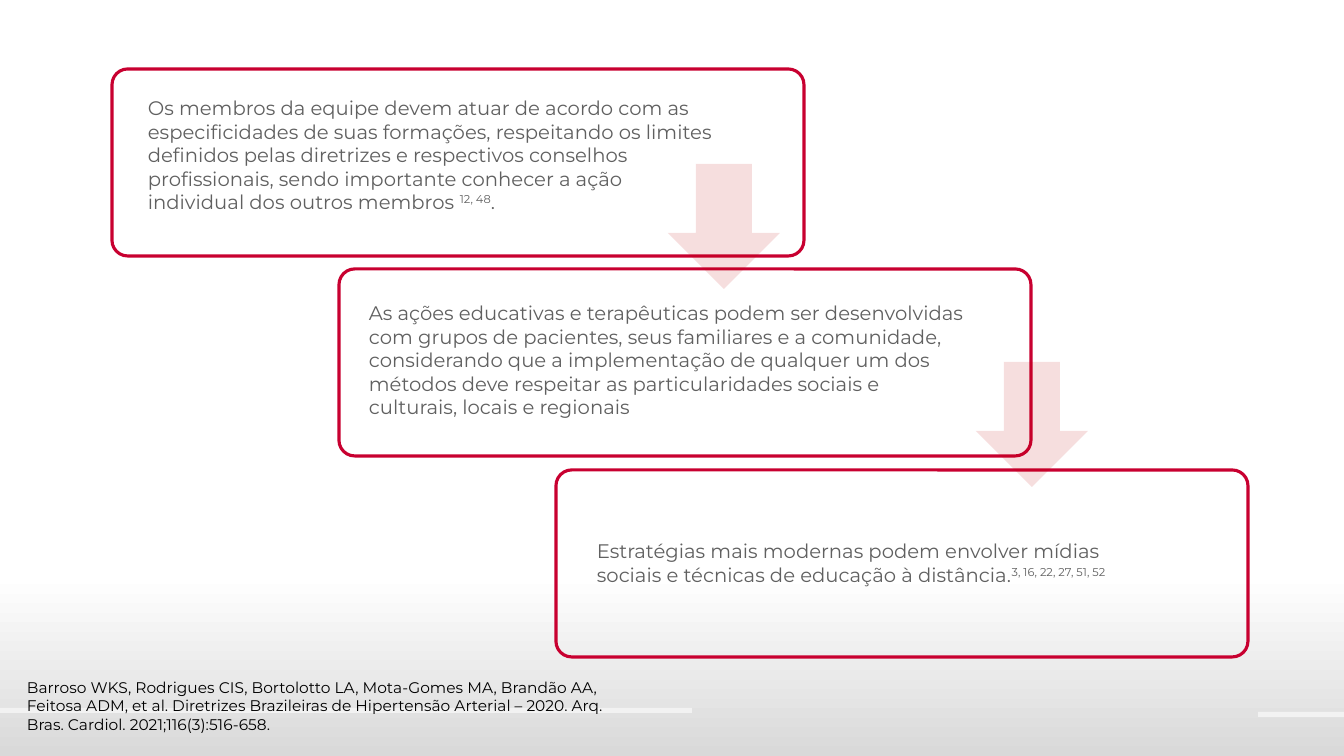
from lxml import etree
from pptx import Presentation
from pptx.dml.color import RGBColor
from pptx.enum.shapes import MSO_SHAPE
from pptx.enum.text import MSO_AUTO_SIZE
from pptx.oxml.ns import qn
from pptx.util import Pt

PX = 914400 / 100.8
PAGE_WIDTH, PAGE_HEIGHT = 1344, 756
FRAME_WIDTH, FRAME_HEIGHT = 692, 187
ARROW_WIDTH, ARROW_HEIGHT = 112, 125
RECTANGLE = MSO_SHAPE.RECTANGLE
ROUNDED = MSO_SHAPE.ROUNDED_RECTANGLE
DOWN_ARROW = MSO_SHAPE.DOWN_ARROW
GROW = MSO_AUTO_SIZE.SHAPE_TO_FIT_TEXT
FONT = "Montserrat"
WHITE = RGBColor(0xFF, 0xFF, 0xFF)
SILVER = RGBColor(0xD9, 0xD9, 0xD9)
PALE = RGBColor(0xF2, 0xF2, 0xF2)
GRAY = RGBColor(0x60, 0x60, 0x60)
BLACK = RGBColor(0, 0, 0)
CRIMSON = RGBColor(0xC8, 0x00, 0x30)
RED = RGBColor(0xC0, 0x00, 0x00)

STEPS = [
    ((112, 69), (26, 22, 586, 152), [
        ("Os membros da equipe devem atuar de acordo com as especificidades de suas "
         "formações, respeitando os limites definidos pelas diretrizes e respectivos "
         "conselhos profissionais, sendo importante conhecer a ação individual dos "
         "outros membros ", False), ("12, 48", True), (".", False)]),
    ((339, 269), (20, 27, 618, 152), [
        ("As ações educativas e terapêuticas podem ser desenvolvidas com grupos de "
         "pacientes, seus familiares e a comunidade, considerando que a implementação "
         "de qualquer um dos métodos deve respeitar as particularidades sociais e "
         "culturais, locais e regionais", False)]),
    ((556, 470), (31, 64, 553, 82), [
        ("Estratégias mais modernas podem envolver mídias sociais e técnicas de "
         "educação à distância.", False), ("3, 16, 22, 27, 51, 52", True)]),
]
ARROWS = [(668, 164), (976, 362)]
CITATION = (
    "Barroso WKS, Rodrigues CIS, Bortolotto LA, Mota-Gomes MA, Brandão AA, Feitosa ADM, "
    "et al. Diretrizes Brasileiras de Hipertensão Arterial – 2020. Arq. Bras. Cardiol. "
    "2021;116(3):516-658.").replace("Brasileiras", "Brazileiras")


def scaled(*lengths):
    """Turn px lengths into EMU."""
    return [round(length * PX) for length in lengths]


def add_plain_shape(page, kind, box, fill=None):
    """Add a shape without outline or shadow."""
    shape = page.shapes.add_shape(kind, *scaled(*box))
    shape.shadow.inherit = False
    shape.line.fill.background()
    if fill is None:
        shape.fill.background()
    else:
        shape.fill.solid()
        shape.fill.fore_color.rgb = fill
    return shape


def add_text(page, box, spans, size=14, color=GRAY):
    """Add a wrapped text box of (text, superscript) spans."""
    frame = page.shapes.add_textbox(*scaled(*box)).text_frame
    frame.word_wrap = True
    frame.auto_size = GROW
    for text, superscript in spans:
        span = frame.paragraphs[0].add_run()
        span.text = text
        span.font.name = FONT
        span.font.size = Pt(size)
        span.font.color.rgb = color
        if superscript:
            span.font._element.set("baseline", "30000")


def add_backdrop(page, box):
    """Shade the page and draw the two pale footer bars."""
    left, top, width, height = box
    backdrop = add_plain_shape(page, RECTANGLE, box)
    backdrop.fill.gradient()
    backdrop.fill.gradient_angle = 270
    stops = zip(backdrop.fill.gradient_stops, (0.76, 1), (WHITE, SILVER))
    for stop, position, color in stops:
        stop.position = position
        stop.color.rgb = color
    add_plain_shape(page, RECTANGLE, (left, top + 708, 692, 5), PALE)
    add_plain_shape(page, RECTANGLE, (left + width - 86, top + 712, 86, 5), PALE)


def add_step(page, box, text_box, spans):
    """Draw a rounded frame with its text inside."""
    left, top, width, height = box
    inset_left, inset_top, text_width, text_height = text_box
    add_text(page, (left + inset_left, top + inset_top, text_width, text_height), spans)
    frame = add_plain_shape(page, ROUNDED, box)
    frame.adjustments[0] = 0.084
    frame.line.color.rgb = CRIMSON
    frame.line.width = Pt(2.25)


def add_arrow(page, box):
    """Draw a translucent arrow to the next step."""
    arrow = add_plain_shape(page, DOWN_ARROW, box, RED)
    color = arrow._element.spPr.find(qn("a:solidFill"))[0]
    etree.SubElement(color, qn("a:alpha")).set("val", "13000")


def main():
    """Build and save the deck."""
    deck = Presentation()
    deck.slide_width, deck.slide_height = scaled(PAGE_WIDTH, PAGE_HEIGHT)
    page = deck.slides.add_slide(deck.slide_layouts[6])
    add_backdrop(page, (0, 0, PAGE_WIDTH, PAGE_HEIGHT))
    for corner, text_box, spans in STEPS:
        add_step(page, (*corner, FRAME_WIDTH, FRAME_HEIGHT), text_box, spans)
    for corner in ARROWS:
        add_arrow(page, (*corner, ARROW_WIDTH, ARROW_HEIGHT))
    add_text(page, (17, 673, 610, 67), [(CITATION, False)], size=11, color=BLACK)
    deck.save("out.pptx")


if __name__ == "__main__":
    main()
